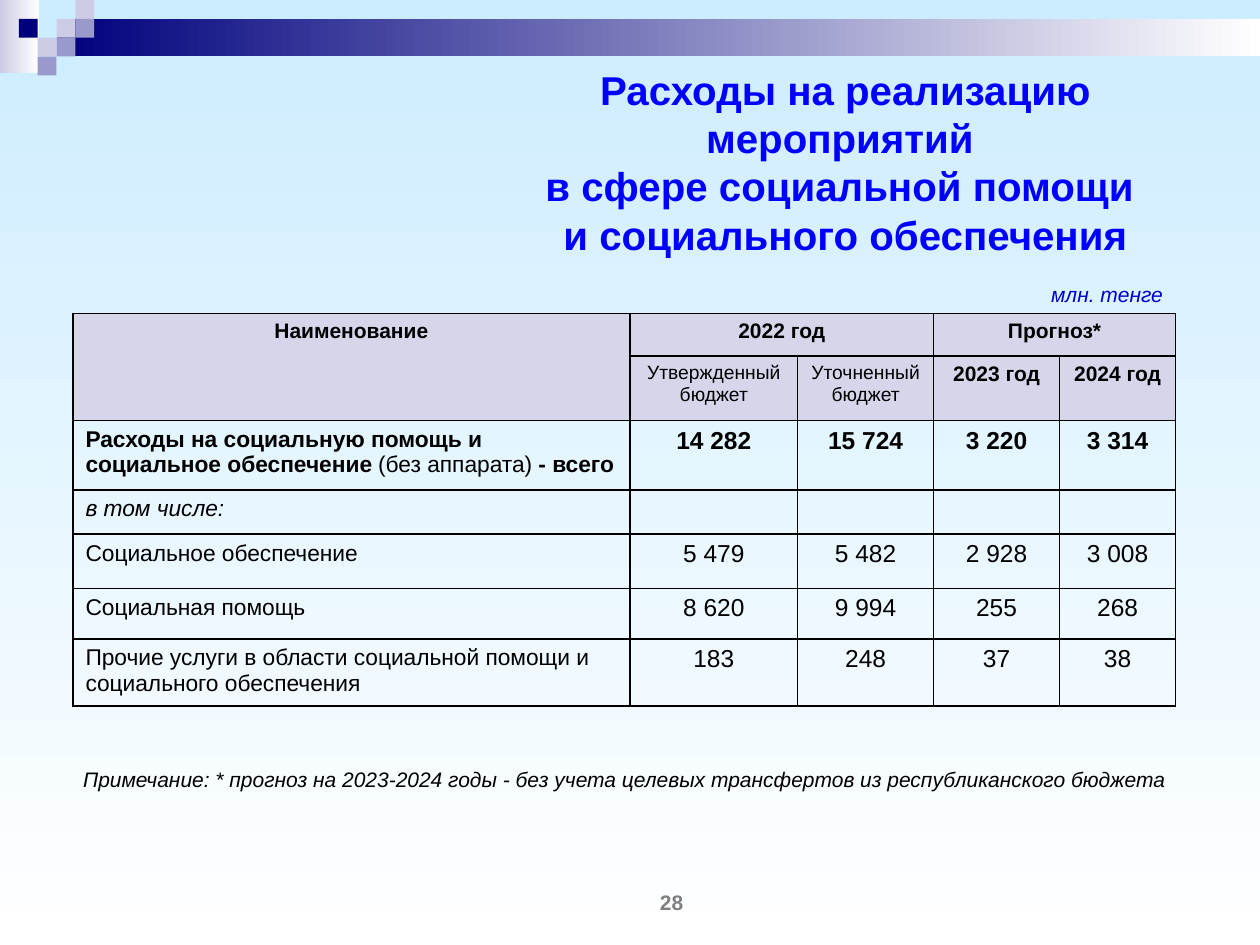
from lxml.etree import SubElement
from pptx import Presentation
from pptx.dml.color import RGBColor
from pptx.enum.shapes import MSO_SHAPE
from pptx.enum.text import MSO_ANCHOR, MSO_AUTO_SIZE, PP_ALIGN
from pptx.oxml.ns import qn
from pptx.util import Cm, Pt

NAVY, LILAC, VIOLET, HEAD = "00007D", "CCCCE6", "9999CC", "D6D6EB"
SQUARE = 0.38
SQUARES = [(3, 1, LILAC), (4, 0, LILAC), (4, 1, VIOLET), (2, 2, LILAC),
           (1, 1, NAVY), (3, 2, VIOLET), (2, 3, VIOLET)]
COLS = [11.23, 3.38, 2.74, 2.54, 2.34]
ROWS = [0.81, 0.86, 1.3, 1.4, 0.89, 1.09, 1.02, 1.35]
MERGES = [(0, 0, 0, 4), (1, 0, 2, 0), (1, 1, 1, 2), (1, 3, 1, 4)]
BOLD = {"size": 12, "bold": True}
SMALL = {"size": 11}
HEADERS = [
    (1, 0, "Наименование", BOLD),
    (1, 1, "2022 год", BOLD),
    (1, 3, "Прогноз*", BOLD),
    (2, 1, "Утвержденный бюджет", SMALL),
    (2, 2, "Уточненный бюджет", SMALL),
    (2, 3, "2023 год", BOLD),
    (2, 4, "2024 год", BOLD),
]
TOTAL = [
    ("Расходы на социальную помощь и социальное обеспечение ", {"bold": True}),
    ("(без аппарата)", {}),
    (" - всего", {"bold": True}),
]
BODY = [
    (TOTAL, ["14 282", "15 724", "3 220", "3 314"], {"bold": True}),
    ([("в том числе:", {"italic": True})], [""] * 4, {}),
    ([("Социальное обеспечение", {})], ["5 479", "5 482", "2 928", "3 008"], {}),
    ([("Социальная помощь", {})], ["8 620", "9 994", "255", "268"], {}),
    ([("Прочие услуги в области социальной помощи и социального обеспечения", {})],
     ["183", "248", "37", "38"], {}),
]


def rgb(value):
    return RGBColor.from_string(value)


class Deck:
    font = {"name": "Arial", "size": 12, "bold": False, "italic": False, "color": "000000"}

    def __init__(self, width, height):
        self.prs = Presentation()
        self.prs.slide_width, self.prs.slide_height = Cm(width), Cm(height)
        self.s = self.prs.slides.add_slide(self.prs.slide_layouts[5])

    def style(self, font, **values):
        for key, value in {**self.font, **values}.items():
            if key == "color":
                font.color.rgb = rgb(value)
            else:
                setattr(font, key, Pt(value) if key == "size" else value)

    def fill(self, fill, colors, angle=0):
        if len(colors) == 1:
            fill.solid()
            fill.fore_color.rgb = rgb(colors[0])
            return
        fill.gradient()
        fill.gradient_angle = angle
        for stop, color in zip(fill.gradient_stops, colors):
            stop.color.rgb = rgb(color)

    def add_runs(self, tf, runs, align=PP_ALIGN.CENTER, **values):
        p = tf.paragraphs[0]
        p.alignment = align
        for text, extra in runs:
            for i, line in enumerate(text.split("\n")):
                if i:
                    p.add_line_break()
                r = p.add_run()
                r.text = line
                self.style(r.font, **{**values, **extra})

    def rect(self, x, y, w, h, *colors):
        sp = self.s.shapes.add_shape(MSO_SHAPE.RECTANGLE, Cm(x), Cm(y), Cm(w), Cm(h))
        sp.shadow.inherit = False
        sp.line.fill.background()
        self.fill(sp.fill, colors)

    def title(self, x, y, w, h, text, **values):
        sp = self.s.shapes.title
        box = {"left": x, "top": y, "width": w, "height": h}
        for key, value in box.items():
            setattr(sp, key, Cm(value))
        tf = sp.text_frame
        frame = {"word_wrap": True, "auto_size": MSO_AUTO_SIZE.NONE,
                 "vertical_anchor": MSO_ANCHOR.MIDDLE}
        for key, value in frame.items():
            setattr(tf, key, value)
        self.add_runs(tf, [(text, {})], **values)

    def text(self, x, y, w, h, text, anchor=MSO_ANCHOR.TOP, **values):
        tf = self.s.shapes.add_textbox(Cm(x), Cm(y), Cm(w), Cm(h)).text_frame
        tf.word_wrap = True
        tf.vertical_anchor = anchor
        self.add_runs(tf, [(text, {})], **values)

    def table(self, x, y, cols, rows, merges):
        tb = self.s.shapes.add_table(len(rows), len(cols), Cm(x), Cm(y),
                                     Cm(sum(cols)), Cm(sum(rows))).table
        tb.first_row = tb.horz_banding = False
        for col, width in zip(tb.columns, cols):
            col.width = Cm(width)
        for row, height in zip(tb.rows, rows):
            row.height = Cm(height)
        for r1, c1, r2, c2 in merges:
            tb.cell(r1, c1).merge(tb.cell(r2, c2))
        return tb

    def cell(self, cell, sides, color=None):
        tcPr = cell._tc.get_or_add_tcPr()
        for side in "LRTB":
            ln = SubElement(tcPr, qn(f"a:ln{side}"), w=str(Pt(1)))
            if side in sides:
                fill = SubElement(ln, qn("a:solidFill"))
                SubElement(fill, qn("a:srgbClr"), val="000000")
            else:
                SubElement(ln, qn("a:noFill"))
        if color:
            self.fill(cell.fill, [color])
        else:
            cell.fill.background()
        p = cell.text_frame.paragraphs[0]
        if not p.runs:
            SubElement(p._p, qn("a:endParaRPr"), sz="1200")


def main():
    d = Deck(25.4, 19.05)
    d.fill(d.s.background.fill, ["CCECFF", "FFFFFF"], 270)
    d.rect(0, 0, 0.79, 1.47, LILAC, "FFFFFF")
    d.rect(1.14, SQUARE, 24.26, 0.76, NAVY, "FFFFFF")
    for col, row, color in SQUARES:
        d.rect(col * SQUARE, row * SQUARE, SQUARE, SQUARE, color)

    d.title(9.53, 1.57, 15.04, 3.38,
            "Расходы на реализацию мероприятий \nв сфере социальной помощи \n"
            "и социального обеспечения", size=23, bold=True, color="0000FF")

    tb = d.table(1.47, 5.51, COLS, ROWS, MERGES)
    unit = tb.cell(0, 0)
    unit.vertical_anchor = MSO_ANCHOR.BOTTOM
    d.add_runs(unit.text_frame, [("млн. тенге", {})], PP_ALIGN.RIGHT,
               italic=True, color="0000CC")
    for row, col, text, values in HEADERS:
        d.add_runs(tb.cell(row, col).text_frame, [(text, {})], **values)
    for row, (label, numbers, values) in enumerate(BODY, 3):
        d.add_runs(tb.cell(row, 0).text_frame, label, PP_ALIGN.LEFT, size=13)
        for col, number in enumerate(numbers, 1):
            if number:
                d.add_runs(tb.cell(row, col).text_frame, [(number, {})], size=14, **values)
    for row in range(len(ROWS)):
        for col in range(len(COLS)):
            d.cell(tb.cell(row, col), "LRTB" if row else "B",
                   HEAD if row in (1, 2) else None)

    d.text(11, 17.98, 5.08, 0.58, "28", MSO_ANCHOR.BOTTOM, bold=True, color="7F7F7F")
    d.text(1.27, 15.32, 22.66, 0.76,
           "Примечание: * прогноз на 2023-2024 годы - без учета целевых трансфертов "
           "из республиканского бюджета", italic=True)
    d.prs.save("out.pptx")


if __name__ == "__main__":
    main()
